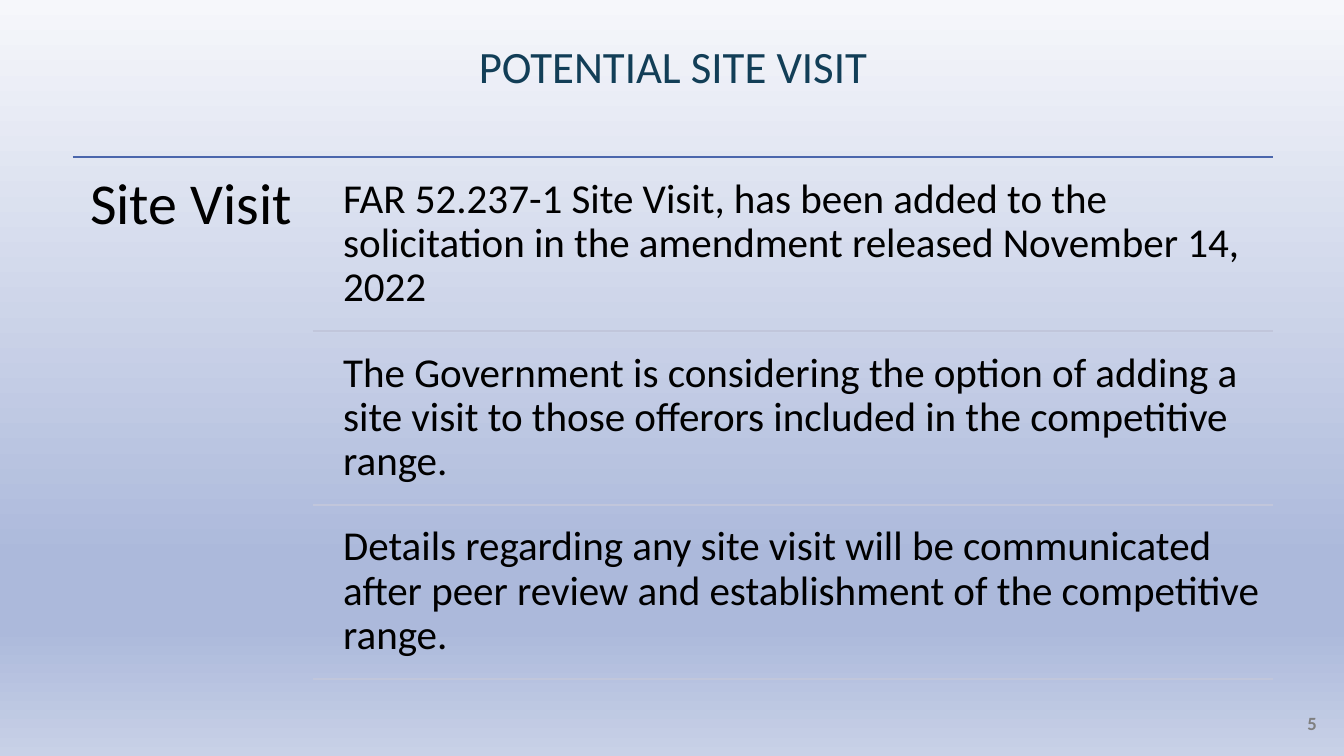
from dataclasses import dataclass

from lxml import etree
from pptx import Presentation
from pptx.dml.color import RGBColor
from pptx.enum import shapes, text
from pptx.oxml import ns
from pptx.util import Pt


@dataclass(frozen=True)
class Theme:
    """Colours, font and type sizes of the slide."""
    font: str = "Calibri"
    title: str = "123E57"
    body: str = "000000"
    number: str = "7F7F7F"
    rule: str = "4A66AC"
    divider: str = "C1C6DB"
    backdrop: tuple = ((0, "F6F7FB"), (74, "ACB9DB"), (83, "ACB9DB"), (100, "C8D1E7"))
    title_size: float = 24
    topic_size: float = 31
    detail_size: float = 22
    number_size: float = 10


THEME = Theme()
DETAILS = (
    "FAR 52.237-1 Site Visit, has been added to the solicitation in the amendment "
    "released November 14, 2022",
    "The Government is considering the option of adding a site visit to those "
    "offerors included in the competitive range.",
    "Details regarding any site visit will be communicated after peer review and "
    "establishment of the competitive range.",
)


def paint_backdrop(slide):
    """Fill the background with the vertical gradient."""
    fill = slide.background.fill
    fill.gradient()
    fill.gradient_angle = 270
    stops = slide.element.find(".//" + ns.qn("a:gsLst"))
    for stop in list(stops):
        stops.remove(stop)
    for percent, colour in THEME.backdrop:
        stop = etree.SubElement(stops, ns.qn("a:gs"), pos=str(percent * 1000))
        etree.SubElement(stop, ns.qn("a:srgbClr"), val=colour)


def write(holder, wording, size, colour, inset=0, align=text.PP_ALIGN.LEFT,
          anchor=text.MSO_ANCHOR.TOP, bold=False):
    """Put one formatted paragraph into a shape."""
    frame = holder.text_frame
    frame.word_wrap = True
    frame.auto_size = text.MSO_AUTO_SIZE.NONE
    frame.vertical_anchor = anchor
    frame.margin_left = frame.margin_right = Pt(inset)
    frame.margin_top = frame.margin_bottom = Pt(inset)
    paragraph = frame.paragraphs[0]
    paragraph.text = wording
    paragraph.alignment = align
    paragraph.line_spacing = 0.9
    paragraph.space_before = Pt(0)
    font = paragraph.font
    font.name, font.size, font.bold = THEME.font, Pt(size), bold
    font.color.rgb = RGBColor.from_string(colour)


def add_text(slide, box, *wording, **style):
    """Add a text box at the given box."""
    write(slide.shapes.add_textbox(*map(Pt, box)), *wording, **style)


def add_rule(slide, left, right, y, colour):
    """Draw a thin horizontal line."""
    rule = slide.shapes.add_connector(
        shapes.MSO_CONNECTOR.STRAIGHT, Pt(left), Pt(y), Pt(right), Pt(y))
    rule.line.color.rgb = RGBColor.from_string(colour)
    rule.line.width = Pt(1)
    etree.SubElement(rule.element.spPr, ns.qn("a:effectLst"))


def place_title(slide, box, wording):
    """Move and format the title placeholder."""
    title = slide.shapes.title
    title.left, title.top, title.width, title.height = map(Pt, box)
    write(title, wording, THEME.title_size, THEME.title,
          align=text.PP_ALIGN.CENTER, anchor=text.MSO_ANCHOR.BOTTOM)


def place_topic(slide, box, topic, details):
    """Set a topic at the left and its divided details at the right."""
    left, top, width, height = box
    right = left + width
    topic_width = width * 0.2
    detail_left = left + width * 0.215
    gap = height / (21 * len(details) + 1)
    row_height = 20 * gap

    add_rule(slide, left, right, top, THEME.rule)
    add_text(slide, (left, top, topic_width, height), topic,
             THEME.topic_size, THEME.body, inset=9.3)
    for index, detail in enumerate(details):
        row_top = top + gap + index * (row_height + gap)
        add_text(slide, (detail_left, row_top, right - detail_left, row_height),
                 detail, THEME.detail_size, THEME.body, inset=6.6)
        add_rule(slide, left + topic_width, right, row_top + row_height, THEME.divider)


def place_number(slide, box, number):
    """Write the slide number."""
    add_text(slide, box, number, THEME.number_size, THEME.number,
             align=text.PP_ALIGN.RIGHT, bold=True)


def main():
    """Build and save the slide."""
    deck = Presentation()
    deck.slide_width, deck.slide_height = Pt(720), Pt(405)
    slide = deck.slides.add_slide(deck.slide_layouts.get_by_name("Title Only"))
    paint_backdrop(slide)
    place_title(slide, (39, 24.5, 643, 25.2), "POTENTIAL SITE VISIT")
    place_topic(slide, (39, 84.2, 643, 283.8), "Site Visit", DETAILS)
    place_number(slide, (681, 383, 24.5, 14.4), "5")
    deck.save("out.pptx")


if __name__ == "__main__":
    main()
